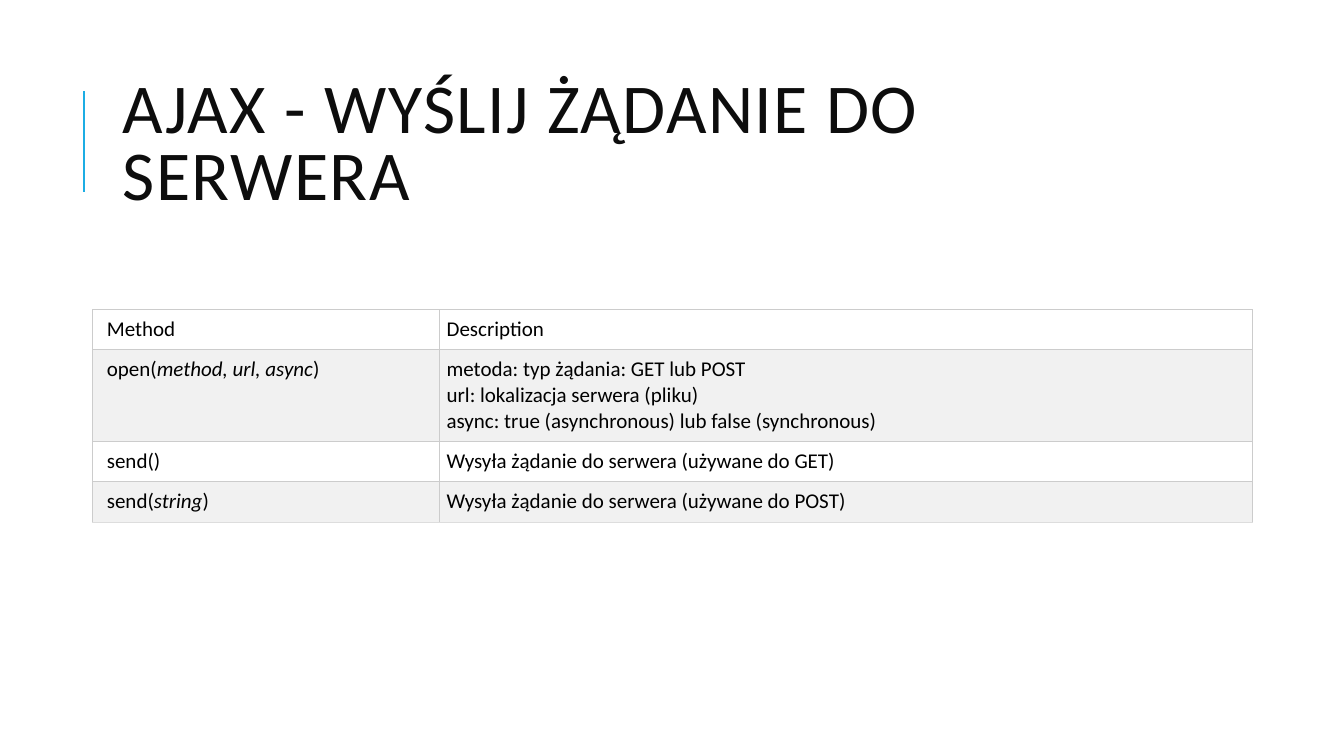
from lxml.etree import SubElement
from pptx import Presentation
from pptx.dml.color import RGBColor
from pptx.enum.shapes import MSO_CONNECTOR
from pptx.enum.text import MSO_ANCHOR
from pptx.oxml import parse_xml
from pptx.oxml.ns import nsdecls, qn
from pptx.util import Inches, Pt


def paint(target, color):
    """Give a fill a solid colour."""
    target.solid()
    target.fore_color.rgb = RGBColor.from_string(color)


def add_border(cell, sides):
    """Draw the cell edges, given as a dict of side letter to colour."""
    props = cell._tc.get_or_add_tcPr()
    for place, (side, color) in enumerate(sides.items()):
        props.insert(place, parse_xml(
            f'<a:ln{side} {nsdecls("a")} w="{Pt(0.75)}"><a:solidFill>'
            f'<a:srgbClr val="{color}"/></a:solidFill></a:ln{side}>'))


deck = Presentation()
deck.slide_width, deck.slide_height = Inches(13.33), Inches(7.5)
slide = deck.slides.add_slide(deck.slide_layouts[6])
paint(slide.background.fill, "FFFFFF")

# Accent line and title
accent = slide.shapes.add_connector(
    MSO_CONNECTOR.STRAIGHT, Inches(0.83), Inches(1.9), Inches(0.83), Inches(0.9))
paint(accent.line.fill, "1CADE4")
accent.line.width = Pt(1.5)
SubElement(accent._element.spPr, qn("a:effectLst"))

title = slide.shapes.add_textbox(Inches(1.12), Inches(0.64), Inches(10.63), Inches(1.64))
frame = title.text_frame
frame.word_wrap = True
frame.vertical_anchor = MSO_ANCHOR.MIDDLE
frame.text = "AJAX - WYŚLIJ ŻĄDANIE DO SERWERA"
frame.paragraphs[0].line_spacing = 0.8
font = frame.paragraphs[0].runs[0].font
font.name, font.size = "Calibri", Pt(50)
paint(font.fill, "0D0D0D")
font._element.set("spc", "100")

# Table of methods: each cell lists its lines, each line its runs;
# every second run is italic
rows = [
    ([["Method"]], [["Description"]]),
    ([["open(", "method, url, async", ")"]],
     [["metoda: typ żądania: GET lub POST"],
      ["url: lokalizacja serwera (pliku)"],
      ["async: true (asynchronous) lub false (synchronous)"]]),
    ([["send()"]], [["Wysyła żądanie do serwera (używane do GET)"]]),
    ([["send(", "string", ")"]], [["Wysyła żądanie do serwera (używane do POST)"]]),
]
widths = [3.44, 8.06]
heights = [0.4, 0.91, 0.4, 0.4]
grid = slide.shapes.add_table(
    len(rows), len(widths), Inches(0.92), Inches(3.07),
    Inches(sum(widths)), Inches(sum(heights))).table
for col, width in zip(grid.columns, widths):
    col.width = Inches(width)

for r, row in enumerate(rows):
    grid.rows[r].height = Inches(heights[r])
    for c, lines in enumerate(row):
        cell = grid.cell(r, c)
        cell.margin_left = Inches(0.07 if c else 0.14)
        cell.margin_right = cell.margin_top = cell.margin_bottom = Inches(0.07)
        paint(cell.fill, "F1F1F1" if r % 2 else "FFFFFF")
        sides = dict.fromkeys("LRTB", "CCCCCC")
        if r == len(rows) - 1:
            sides["B"] = "DDDDDD"
        add_border(cell, sides)
        cell.text_frame.text = "\n".join("" for _ in lines)
        for para, parts in zip(cell.text_frame.paragraphs, lines):
            for i, part in enumerate(parts):
                run = para.add_run()
                run.text = part
                run.font.name, run.font.size = "Calibri", Pt(15)
                run.font.bold = False
                run.font.italic = i % 2 == 1
                paint(run.font.fill, "000000")

deck.save("out.pptx")
